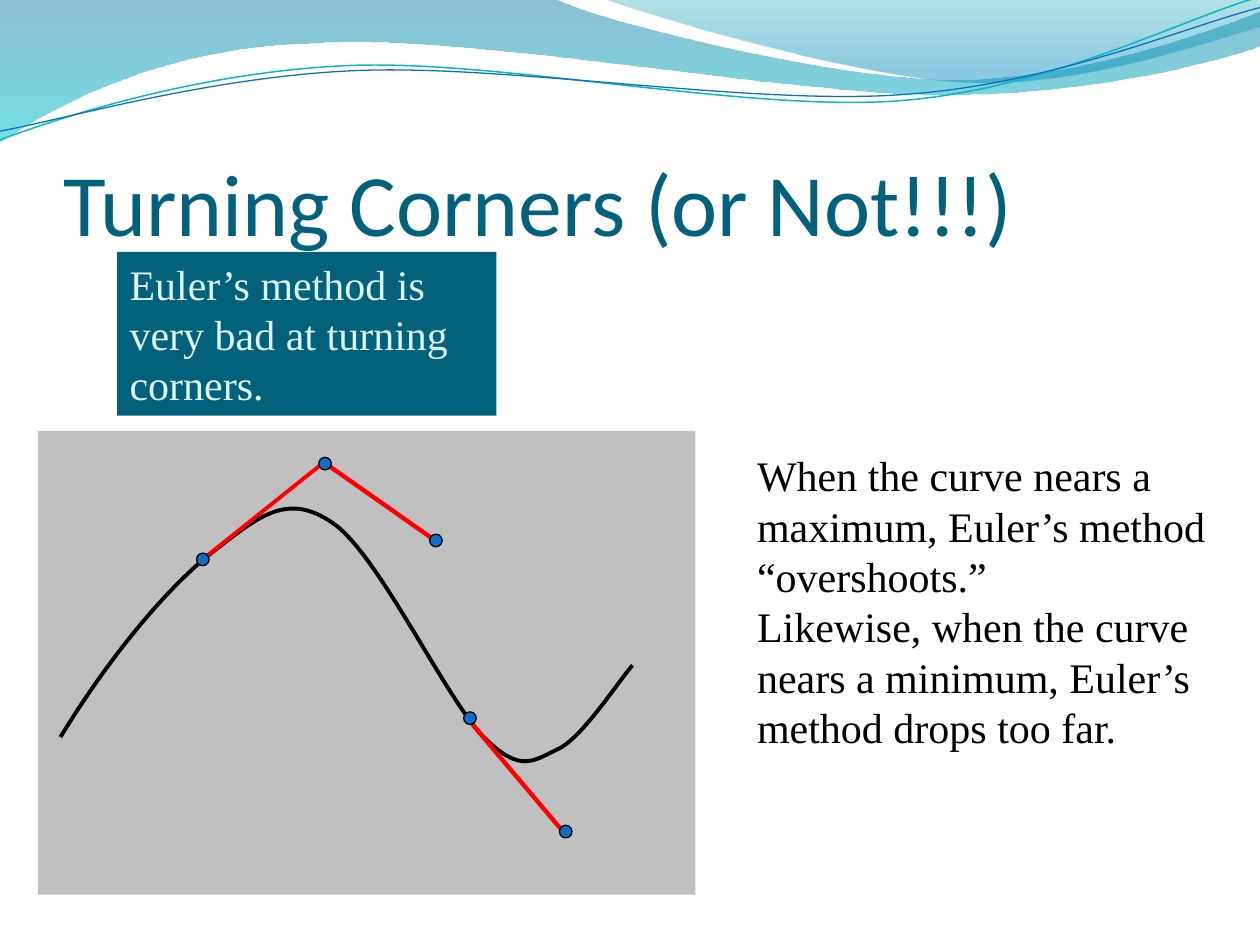
from math import cos, radians, sin

from lxml.etree import SubElement
from pptx import Presentation
from pptx.dml.color import RGBColor
from pptx.enum.shapes import MSO_CONNECTOR, MSO_SHAPE
from pptx.enum.text import MSO_ANCHOR, MSO_AUTO_SIZE, PP_ALIGN
from pptx.oxml.ns import qn
from pptx.util import Inches, Pt

BLACK = RGBColor(0x00, 0x00, 0x00)
RED = RGBColor(0xFF, 0x00, 0x00)
GRAY = RGBColor(0xC0, 0xC0, 0xC0)
BLUE = RGBColor(0x0F, 0x6F, 0xC6)
TEAL = RGBColor(0x0A, 0xB8, 0xBF)
DARK_TEAL = RGBColor(0x04, 0x61, 0x7B)
PALE_CYAN = RGBColor(0xDB, 0xF5, 0xF9)
BAND_BLUE = RGBColor(0x00, 0x74, 0xA1)
BAND_CYAN = RGBColor(0x00, 0xC6, 0xCF)
CREST_GREEN = RGBColor(0x00, 0xA1, 0xA9)
CREST_BLUE = RGBColor(0x00, 0x8B, 0xBF)

# The slide is a grid of 100 columns by 75 rows of square cells.
CELL = Inches(0.1)
DOT_SIZE = 1
WAVE_TILT = 2.7
WAVE_CENTER = (49.9, 5.8)


def grid(*cells):
    return [round(cell * CELL) for cell in cells]


def trace(shapes, start, segments, close=False, tilt=0):
    """Draw an outline whose segments are end points or cubic Bezier triples.

    A tilted outline is laid out level and then turned counter-clockwise.
    """
    points = [start]
    for segment in segments:
        points += zip(segment[::2], segment[1::2])
    if tilt:
        (center_x, center_y), angle = WAVE_CENTER, radians(tilt)
        points = [(center_x + (x - center_x) * cos(angle) - (y - center_y) * sin(angle),
                   center_y + (x - center_x) * sin(angle) + (y - center_y) * cos(angle))
                  for x, y in points]
    builder = shapes.build_freeform(*grid(*points[0]))
    builder.add_line_segments([grid(*point) for point in points[1:]], close=close)
    outline = builder.convert_to_shape()
    outline.shadow.inherit = False
    outline.rotation = -tilt % 360

    # Join each triple of straight pieces into one Bezier curve
    pieces = iter(list(outline.element.iter(qn("a:lnTo"))))
    for segment in segments:
        first = next(pieces)
        if len(segment) == 6:
            first.tag = qn("a:cubicBezTo")
            for piece in (next(pieces), next(pieces)):
                first.append(piece[0])
                piece.getparent().remove(piece)
    return outline


deck = Presentation()
deck.slide_width, deck.slide_height = grid(100, 75)
page = deck.slides.add_slide(deck.slide_layouts[5])
shapes = page.shapes

# Header bands: start, segments, and stops of position, colour, opacity in percent
bands = [
    ((0, 0), [(44, -0.1), (47.6, 1.7, 66.4, 6.3, 75.8, 6.3), (85.3, 6.3, 95.8, 2.6, 100, 0.9),
              (100.1, 3.6), (98.3, 4.4, 87, 7.6, 74.6, 7.5), (62.2, 7.5, 38.2, 2.8, 25.7, 3.4),
              (12.9, 3.6, 4.6, 8.3, -0.1, 11.3), (0, 0)],
     [(0, BAND_BLUE, 45), (1, BAND_CYAN, 55)]),
    ((47.9, -0.1), [(50.9, 1.1, 68.2, 6.2, 76.9, 6.5), (85.6, 6.9, 96.1, 3.2, 100, 2.1),
                    (100, 0), (47.9, -0.1)],
     [(0, CREST_GREEN, 30), (0.8, CREST_BLUE, 45)]),
]
for start, segments, stops in bands:
    band = trace(shapes, start, segments, close=True)
    band.line.fill.background()
    band.fill.gradient()
    band.fill.gradient_angle = 270
    for stop, (position, color, _) in zip(band.fill.gradient_stops, stops):
        stop.position = position
        stop.color.rgb = color
    for tint, (_, _, opacity) in zip(band.element.spPr.iter(qn("a:srgbClr")), stops):
        SubElement(tint, qn("a:alpha")).set("val", str(opacity * 1000))

panel = shapes.add_shape(MSO_SHAPE.RECTANGLE, *grid(3, 34.2, 52.2, 36.8))
panel.shadow.inherit = False
panel.fill.solid()
panel.fill.fore_color.rgb = GRAY
panel.line.fill.background()

# Open curves: two header waves and the solution curve
curves = [
    ((0, 11.1), [(4.8, 9.3, 15.8, 5.7, 27.7, 5.2), (39.5, 4.7, 59.3, 8.9, 71.3, 8),
                 (83.3, 7.1, 93.8, 1.5, 99.8, -0.2)], TEAL, 0.85, WAVE_TILT),
    ((0, 10.4), [(4.7, 9.6, 16.4, 6.1, 28.3, 5.6), (40.3, 5.1, 59.7, 8.4, 71.7, 7.5),
                 (83.6, 6.7, 94.1, 2.1, 100, 0.6)], BLUE, 0.75, WAVE_TILT),
    ((4.8, 58.5), [(8.7, 52.1, 13.3, 46.6, 16.9, 43.8), (20.5, 41, 22.8, 39, 26.4, 41.5),
                   (30, 43.9, 35.4, 55.5, 38.4, 58.5), (41.4, 61.5, 42.4, 60.3, 44.4, 59.4),
                   (46.3, 58.4, 49, 54.2, 50.2, 52.8)], BLACK, 2.25, 0),
]
for start, segments, color, width, tilt in curves:
    curve = trace(shapes, start, segments, tilt=tilt)
    curve.fill.background()
    curve.line.color.rgb = color
    curve.line.width = Pt(width)

title = shapes.title
title.left, title.top, title.width, title.height = grid(5, 7.7, 90.8, 12.5)
title.text_frame.text = "Turning Corners (or Not!!!)"
title.text_frame.auto_size = MSO_AUTO_SIZE.NONE
title.text_frame.vertical_anchor = MSO_ANCHOR.BOTTOM
title.text_frame.margin_left = title.text_frame.margin_right = 0
title.text_frame.margin_top, title.text_frame.margin_bottom = Inches(0.05), 0
title.text_frame.paragraphs[0].alignment = PP_ALIGN.LEFT
title_font = title.text_frame.paragraphs[0].runs[0].font
title_font.name, title_font.size = "Calibri", Pt(50)
title_font.color.rgb = DARK_TEAL

claim = shapes.add_shape(MSO_SHAPE.RECTANGLE, *grid(9.3, 20, 30.1, 13))
claim.shadow.inherit = False
claim.fill.solid()
claim.fill.fore_color.rgb = DARK_TEAL
claim.line.fill.background()
claim.text_frame.text = "Euler’s method is very bad at turning corners."

explanation = shapes.add_textbox(*grid(59.1, 35.2, 40.9, 25.2))
explanation.text_frame.text = (
    "When the curve nears a maximum, Euler’s method\v“overshoots.”\n"
    "Likewise, when the curve nears a minimum, Euler’s method drops too far."
)
for box, color in ((claim, PALE_CYAN), (explanation, BLACK)):
    box.text_frame.word_wrap = True
    box.text_frame.auto_size = MSO_AUTO_SIZE.SHAPE_TO_FIT_TEXT
    box.text_frame.vertical_anchor = MSO_ANCHOR.TOP
    for para in box.text_frame.paragraphs:
        para.alignment = PP_ALIGN.LEFT
        for span in para.runs:
            span.font.name, span.font.size = "Times New Roman", Pt(24)
            span.font.color.rgb = color

# Euler steps, drawn beneath the dots they join
steps = [(26, 36.9, 34.4, 42.8, 2.5), (16.2, 44.3, 25.7, 36.7, 2.25), (37.5, 57.5, 44.6, 65.9, 2.5)]
for *ends, width in steps:
    step_line = shapes.add_connector(MSO_CONNECTOR.STRAIGHT, *grid(*ends))
    step_line.line.color.rgb = RED
    step_line.line.width = Pt(width)
    SubElement(step_line.element.spPr, qn("a:effectLst"))

for left, top in ((34.1, 42.4), (25.3, 36.3), (15.6, 43.9), (36.8, 56.5), (44.4, 65.5)):
    dot = shapes.add_shape(MSO_SHAPE.OVAL, *grid(left, top, DOT_SIZE, DOT_SIZE))
    dot.shadow.inherit = False
    dot.fill.solid()
    dot.fill.fore_color.rgb = BLUE
    dot.line.color.rgb = BLACK
    dot.line.width = Pt(0.75)

deck.save("out.pptx")
